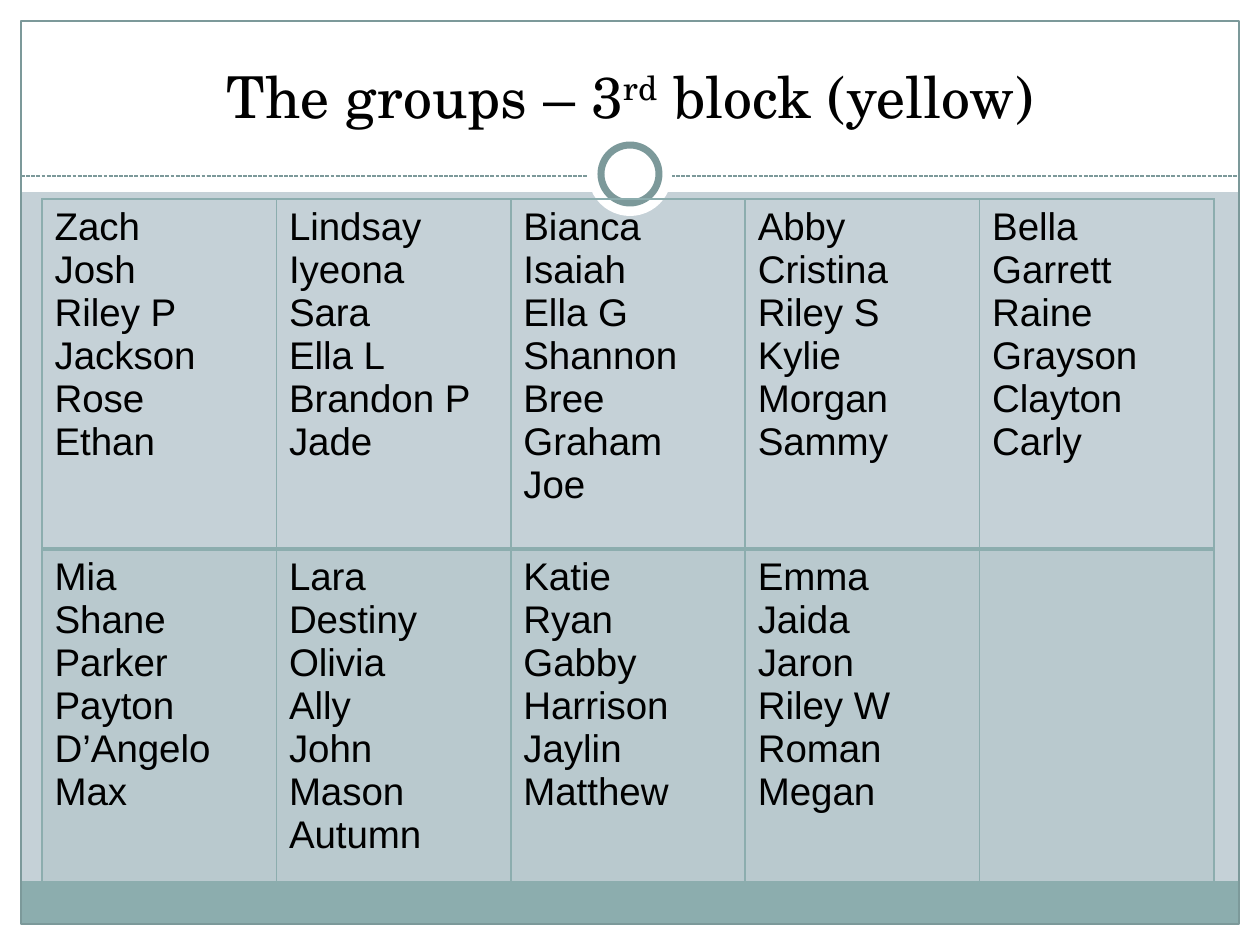
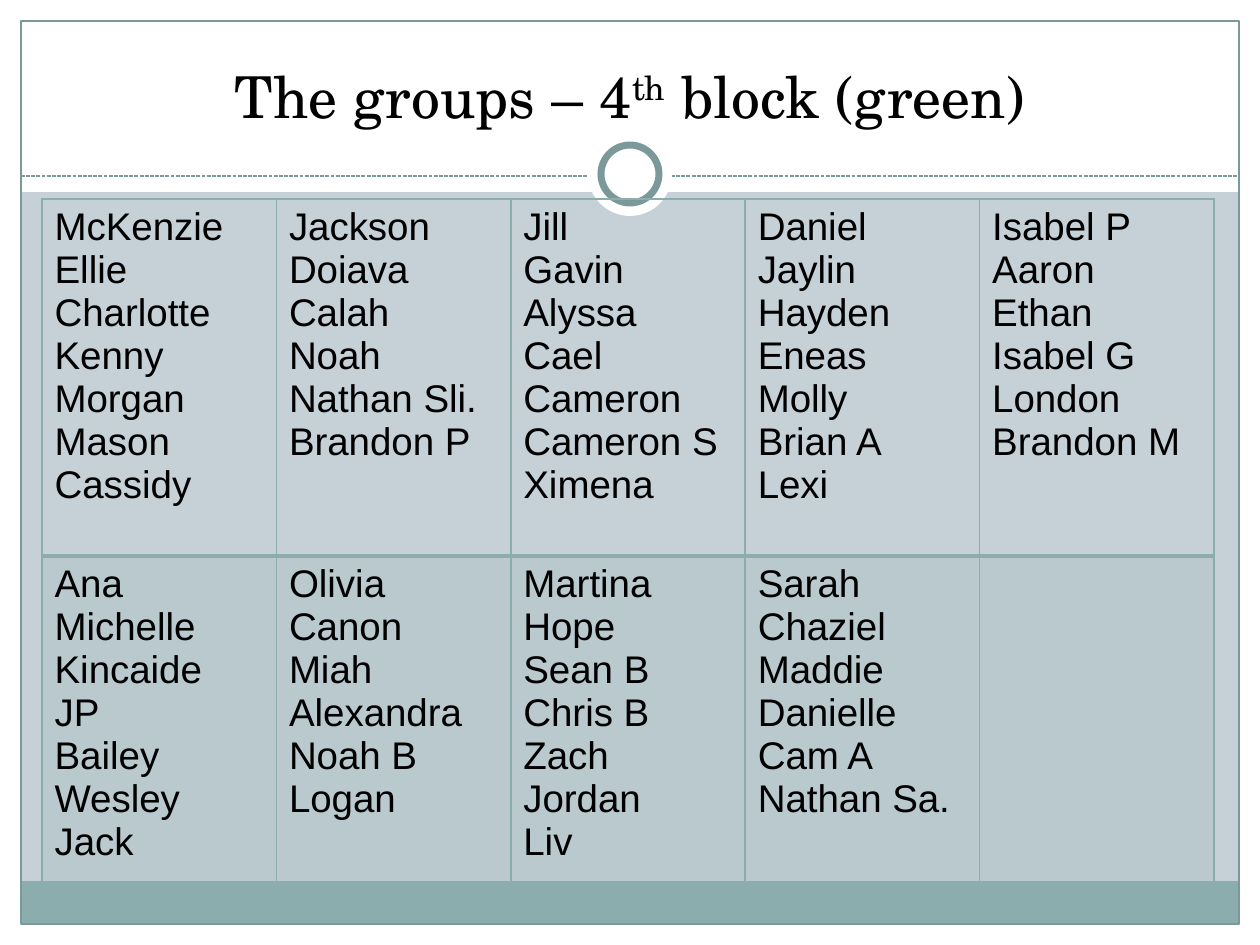
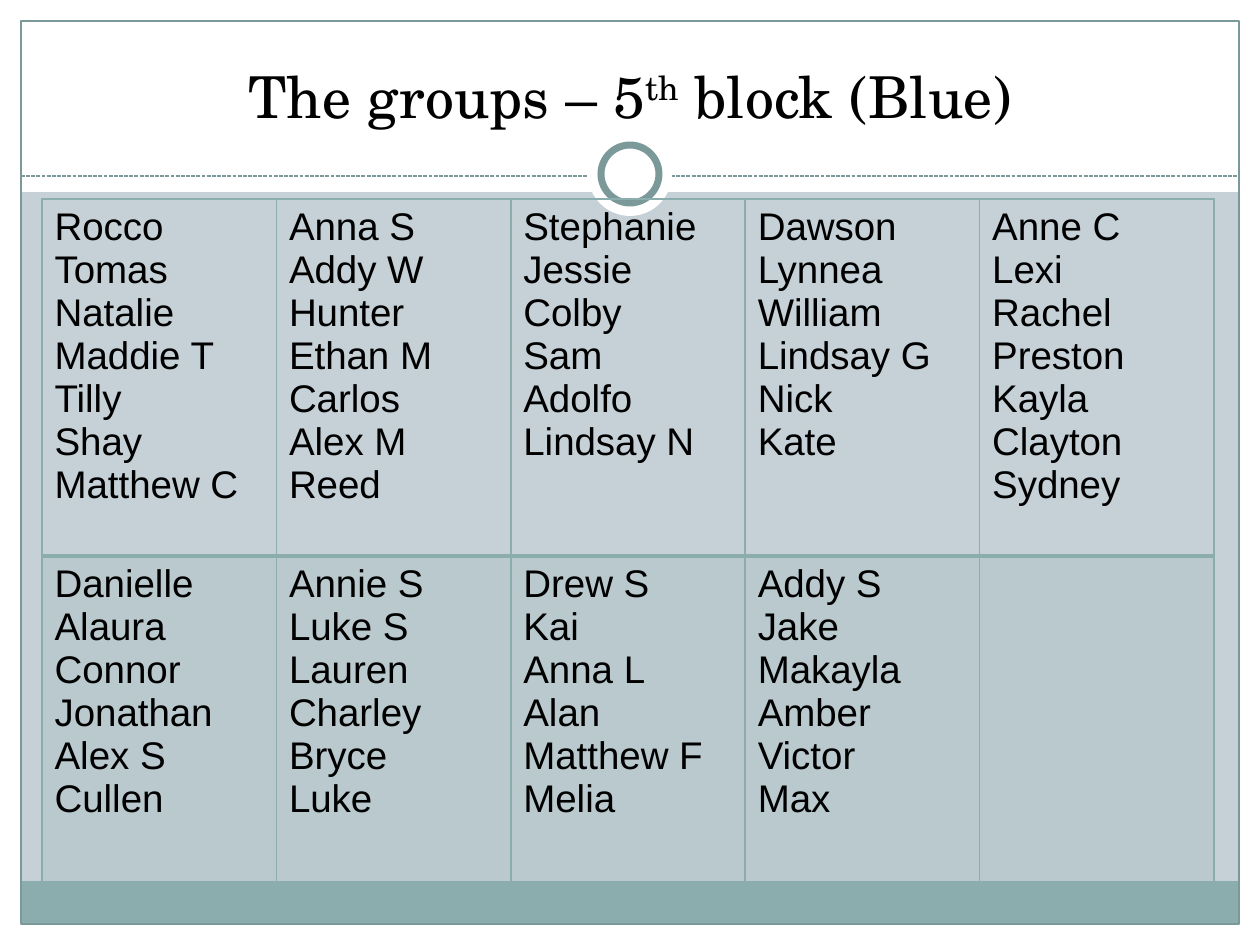
import pptx
import pptx.util
import pptx.dml.color
import pptx.enum.dml
import pptx.enum.shapes
import pptx.enum.text
import pptx.oxml.ns
import lxml.etree

PX_PER_INCH = 126
SLIDE_W, SLIDE_H = 1260, 945
MARGIN = 21
HEADER_H = 192
WHITE, BLACK = "FFFFFF", "000000"
BACKGROUND, TEAL, DARK_TEAL = "C5D1D7", "8CADAE", "7C999A"
TITLE_FONT, BODY_FONT = "TeX Gyre Schola", "Arial"
RECT = pptx.enum.shapes.MSO_SHAPE.RECTANGLE
OVAL = pptx.enum.shapes.MSO_SHAPE.OVAL

BLOCKS = [
    (("3", "rd", "yellow"), 350, [
        ["Zach,Josh,Riley P,Jackson,Rose,Ethan",
         "Lindsay,Iyeona,Sara,Ella L,Brandon P,Jade",
         "Bianca,Isaiah,Ella G,Shannon,Bree,Graham,Joe",
         "Abby,Cristina,Riley S,Kylie,Morgan,Sammy",
         "Bella,Garrett,Raine,Grayson,Clayton,Carly"],
        ["Mia,Shane,Parker,Payton,D’Angelo,Max",
         "Lara,Destiny,Olivia,Ally,John,Mason,Autumn",
         "Katie,Ryan,Gabby,Harrison,Jaylin,Matthew",
         "Emma,Jaida,Jaron,Riley W,Roman,Megan",
         ""],
    ]),
    (("4", "th", "green"), 357, [
        ["McKenzie,Ellie,Charlotte,Kenny,Morgan,Mason,Cassidy",
         "Jackson,Doiava,Calah,Noah,Nathan Sli.,Brandon P",
         "Jill,Gavin,Alyssa,Cael,Cameron,Cameron S,Ximena",
         "Daniel,Jaylin,Hayden,Eneas,Molly,Brian A,Lexi",
         "Isabel P,Aaron,Ethan,Isabel G,London,Brandon M"],
        ["Ana,Michelle,Kincaide,JP,Bailey,Wesley,Jack",
         "Olivia,Canon,Miah,Alexandra,Noah B,Logan",
         "Martina,Hope,Sean B,Chris B,Zach,Jordan,Liv",
         "Sarah,Chaziel,Maddie,Danielle,Cam A,Nathan Sa.",
         ""],
    ]),
    (("5", "th", "Blue"), 357, [
        ["Rocco,Tomas,Natalie,Maddie T,Tilly,Shay,Matthew C",
         "Anna S,Addy W,Hunter,Ethan M,Carlos,Alex M,Reed",
         "Stephanie,Jessie,Colby,Sam,Adolfo,Lindsay N",
         "Dawson,Lynnea,William,Lindsay G,Nick,Kate",
         "Anne C,Lexi,Rachel,Preston,Kayla,Clayton,Sydney"],
        ["Danielle,Alaura,Connor,Jonathan,Alex S,Cullen",
         "Annie S,Luke S,Lauren,Charley,Bryce,Luke",
         "Drew S,Kai,Anna L,Alan,Matthew F,Melia",
         "Addy S,Jake,Makayla,Amber,Victor,Max",
         ""],
    ]),
]


def px(*lengths):
    return [round(n * 914400 / PX_PER_INCH) for n in lengths]


def rgb(color):
    return pptx.dml.color.RGBColor.from_string(color)


def sub(parent, tag, **attrs):
    return lxml.etree.SubElement(parent, pptx.oxml.ns.qn(tag), **attrs)


def set_fill(fill, color=None):
    if color:
        fill.solid()
        fill.fore_color.rgb = rgb(color)
    else:
        fill.background()


def add_shape(slide, kind, box, fill=None, line=None, width=0.75):
    sp = slide.shapes.add_shape(kind, *px(*box))
    sp.shadow.inherit = False
    set_fill(sp.fill, fill)
    set_fill(sp.line.fill, line)
    if line:
        sp.line.width = pptx.util.Pt(width)


def add_dashed_line(slide, *ends):
    line = slide.shapes.add_connector(
        pptx.enum.shapes.MSO_CONNECTOR.STRAIGHT, *px(*ends))
    line.line.color.rgb = rgb(DARK_TEAL)
    line.line.width = pptx.util.Pt(0.75)
    line.line.dash_style = pptx.enum.dml.MSO_LINE.SQUARE_DOT
    sub(line._element.spPr, "a:effectLst")


def write(p, text, size=22, font=BODY_FONT, color=BLACK, baseline=0):
    r = p.add_run()
    r.text = text
    r.font.size = pptx.util.Pt(size)
    r.font.name = font
    r.font.color.rgb = rgb(color)
    r.font.bold = False
    if baseline:
        r.font._element.set("baseline", str(baseline * 1000))


def add_frame(slide):
    set_fill(slide.background.fill, BACKGROUND)
    inner_w = SLIDE_W - 2 * MARGIN
    right, bottom = SLIDE_W - MARGIN, SLIDE_H - MARGIN
    for box in [(0, bottom, SLIDE_W, MARGIN), (0, 0, SLIDE_W, HEADER_H),
                (0, 0, MARGIN, SLIDE_H), (right, 0, MARGIN, SLIDE_H)]:
        add_shape(slide, RECT, box, fill=WHITE)
    add_shape(slide, RECT, (MARGIN, bottom - 43, inner_w, 43), fill=TEAL)
    add_shape(slide, RECT, (MARGIN, MARGIN, inner_w, SLIDE_H - 2 * MARGIN),
              line=DARK_TEAL)
    add_dashed_line(slide, MARGIN, 176, right, 176)
    add_shape(slide, OVAL, (588, 132, 84, 84), fill=WHITE)
    add_shape(slide, OVAL, (601, 145, 58, 58), fill=WHITE, line=DARK_TEAL, width=4)


def add_title(slide, number, suffix, color_name):
    tf = slide.shapes.add_textbox(*px(42, 32, 1176, 104)).text_frame
    tf.word_wrap = True
    tf.vertical_anchor = pptx.enum.text.MSO_ANCHOR.BOTTOM
    p = tf.paragraphs[0]
    p.alignment = pptx.enum.text.PP_ALIGN.CENTER
    for text, baseline in [(f"The groups – {number}", 0), (suffix, 30),
                           (f" block ({color_name})", 0)]:
        write(p, text, size=33, font=TITLE_FONT, baseline=baseline)


def set_borders(cell, **widths):
    tc_pr = cell._tc.get_or_add_tcPr()
    for i, side in enumerate("LRTB"):
        width = pptx.util.Pt(widths.get(side, 1))
        ln = sub(tc_pr, f"a:ln{side}", w=str(width))
        sub(sub(ln, "a:solidFill"), "a:srgbClr", val=TEAL)
        tc_pr.insert(i, ln)


def add_groups(slide, top_row_h, rows):
    bottom_row_h = 350
    table = slide.shapes.add_table(
        len(rows), len(rows[0]),
        *px(42, 199, 1172, top_row_h + bottom_row_h)).table
    table.first_row = table.horz_banding = False
    table.rows[0].height, table.rows[1].height = px(top_row_h, bottom_row_h)
    for y, groups in enumerate(rows):
        for x, names in enumerate(groups):
            cell = table.cell(y, x)
            set_fill(cell.fill, TEAL if y else None)
            if y:
                clr = cell.fill._xPr.find(".//" + pptx.oxml.ns.qn("a:srgbClr"))
                sub(clr, "a:alpha", val="20000")
            set_borders(cell, **{"T" if y else "B": 2})
            tf = cell.text_frame
            for i, name in enumerate(names.split(",") if names else []):
                write(tf.add_paragraph() if i else tf.paragraphs[0], name)


def main():
    prs = pptx.Presentation()
    prs.slide_width, prs.slide_height = px(SLIDE_W, SLIDE_H)
    for title, top_row_h, rows in BLOCKS:
        slide = prs.slides.add_slide(prs.slide_layouts[6])
        add_frame(slide)
        add_title(slide, *title)
        add_groups(slide, top_row_h, rows)
    prs.save("out.pptx")


if __name__ == "__main__":
    main()
